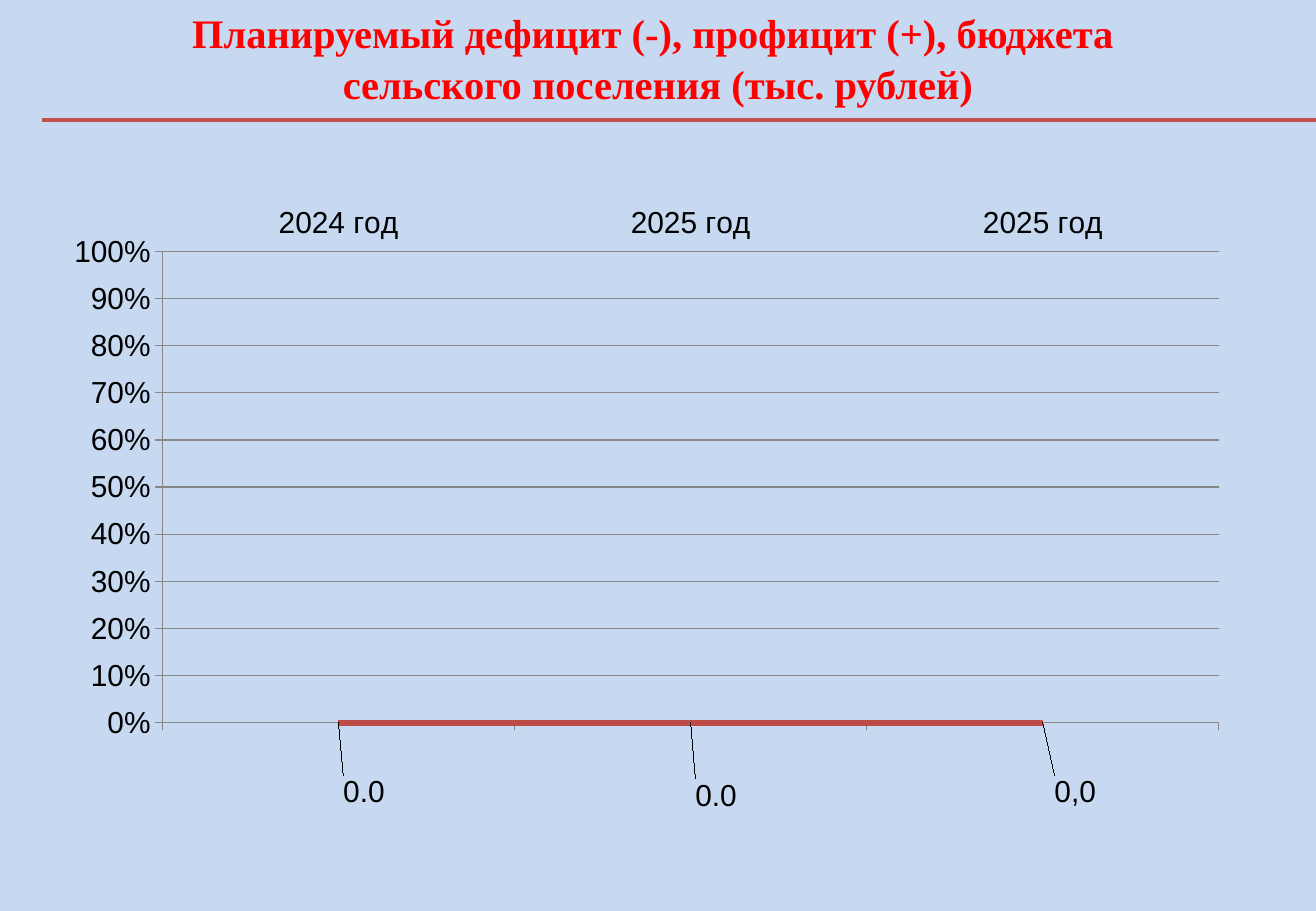
import pptx
import pptx.chart.data
import pptx.dml.color
import pptx.enum.chart
import pptx.enum.shapes
import pptx.enum.text
import pptx.oxml
import pptx.oxml.ns
import pptx.util

Pt = pptx.util.Pt
CHART_NAMESPACE = pptx.oxml.ns.nsdecls("c")


def color(hex_string):
    return pptx.dml.color.RGBColor.from_string(hex_string)


def manual_layout(**settings):
    items = "".join(f'<c:{name} val="{value}"/>' for name, value in settings.items())
    return pptx.oxml.parse_xml(
        f"<c:layout {CHART_NAMESPACE}><c:manualLayout>{items}</c:manualLayout></c:layout>")


class SlideBuilder:
    TITLE_FONT, CHART_FONT = "Times New Roman", "Arial"
    BACKGROUND, TITLE, TEXT = "C6D9F1", "FF0000", "000000"
    RULE, SERIES, AXIS = "C0504D", "BE4B48", "878787"

    def __init__(self, presentation):
        self.slide = presentation.slides.add_slide(presentation.slide_layouts[5])
        fill = self.slide.background.fill
        fill.solid()
        fill.fore_color.rgb = color(self.BACKGROUND)

    def style_font(self, font, name, size, hex_string, bold=False):
        font.name, font.size, font.bold = name, Pt(size), bold
        font.color.rgb = color(hex_string)

    def style_line(self, line, hex_string, width):
        line.color.rgb = color(hex_string)
        line.width = Pt(width)

    def title(self, text, left, top, width, height):
        shape = self.slide.shapes.title
        shape.left, shape.top, shape.width, shape.height = map(Pt, (left, top, width, height))
        frame = shape.text_frame
        frame.text = text
        frame.word_wrap = True
        frame.auto_size = pptx.enum.text.MSO_AUTO_SIZE.NONE
        frame.vertical_anchor = pptx.enum.text.MSO_ANCHOR.TOP
        paragraph = frame.paragraphs[0]
        paragraph.alignment = pptx.enum.text.PP_ALIGN.CENTER
        paragraph.line_spacing = 1.05
        for run in paragraph.runs:
            self.style_font(run.font, self.TITLE_FONT, 24, self.TITLE, True)

    def rule(self, left, right, y):
        connector = self.slide.shapes.add_connector(
            pptx.enum.shapes.MSO_CONNECTOR.STRAIGHT, Pt(left), Pt(y), Pt(right), Pt(y))
        self.style_line(connector.line, self.RULE, 2.5)
        properties = connector._element.spPr
        properties.append(pptx.oxml.parse_xml(
            f'<a:effectLst {pptx.oxml.ns.nsdecls("a")}/>'))

    def line_chart(self, categories, values, left, top, width, height):
        data = pptx.chart.data.CategoryChartData(number_format="#,##0.0")
        data.categories = categories
        data.add_series("Series 1", values)
        chart = self.slide.shapes.add_chart(
            pptx.enum.chart.XL_CHART_TYPE.LINE_STACKED_100,
            Pt(left), Pt(top), Pt(width), Pt(height), data).chart
        chart.has_legend = chart.has_title = False
        self.style_font(chart.font, self.CHART_FONT, 18, self.TEXT)
        chart.plots[0].vary_by_categories = False
        self.style_axes(chart)

        # Plot area position, as shares of the chart
        plot_area = chart._chartSpace.chart.plotArea
        for layout in plot_area.findall(pptx.oxml.ns.qn("c:layout")):
            plot_area.remove(layout)
        plot_area.insert(0, manual_layout(
            layoutTarget="inner", xMode="edge", yMode="edge",
            x=0.058, y=0.087, w=0.901, h=0.746))

        series = chart.plots[0].series[0]
        series.smooth = False
        series.marker.style = pptx.enum.chart.XL_MARKER_STYLE.NONE
        self.style_line(series.format.line, self.SERIES, 3.5)
        return series

    def style_axes(self, chart):
        ticks = pptx.enum.chart.XL_TICK_MARK
        category_axis, value_axis = chart.category_axis, chart.value_axis
        for axis in (category_axis, value_axis):
            axis.major_tick_mark, axis.minor_tick_mark = ticks.OUTSIDE, ticks.NONE
            self.style_line(axis.format.line, self.AXIS, 0.75)
        category_axis.tick_label_position = pptx.enum.chart.XL_TICK_LABEL_POSITION.HIGH
        value_axis.minimum_scale, value_axis.maximum_scale = 0, 1
        value_axis.major_unit = 0.1
        value_axis.has_major_gridlines = True
        self.style_line(value_axis.major_gridlines.format.line, self.AXIS, 0.75)
        value_axis.tick_labels.number_format = "0%"
        value_axis.tick_labels.number_format_is_linked = False

    def point_label(self, series, index, x, y, text=None):
        label = series.points[index].data_label
        if text:
            label.text_frame.text = text
            font = label.text_frame.paragraphs[0].runs[0].font
        else:
            font = label.font
        self.style_font(font, self.CHART_FONT, 18, self.TEXT)
        label.position = pptx.enum.chart.XL_LABEL_POSITION.RIGHT
        element = label._get_or_add_dLbl()
        element.find(pptx.oxml.ns.qn("c:idx")).addnext(manual_layout(x=x, y=y))


def main():
    presentation = pptx.Presentation()
    presentation.slide_width, presentation.slide_height = Pt(780), Pt(540)
    builder = SlideBuilder(presentation)

    # Heading
    builder.rule(25, 780, 71)
    builder.title("Планируемый дефицит (-), профицит (+), бюджета \v"
                  "сельского поселения (тыс. рублей)", 0, 0, 780, 46)

    # Chart with labels moved below the axis
    series = builder.line_chart(("2024 год", "2025 год", "2025 год"), (0, 0, 0),
                                44, 116.5, 707, 374.5)
    labels = ((0, 0.11, None), (0, 0.115, None), (0.006, 0.11, "0,0"))
    for index, (x, y, text) in enumerate(labels):
        builder.point_label(series, index, x, y, text)

    presentation.save("out.pptx")


if __name__ == "__main__":
    main()
